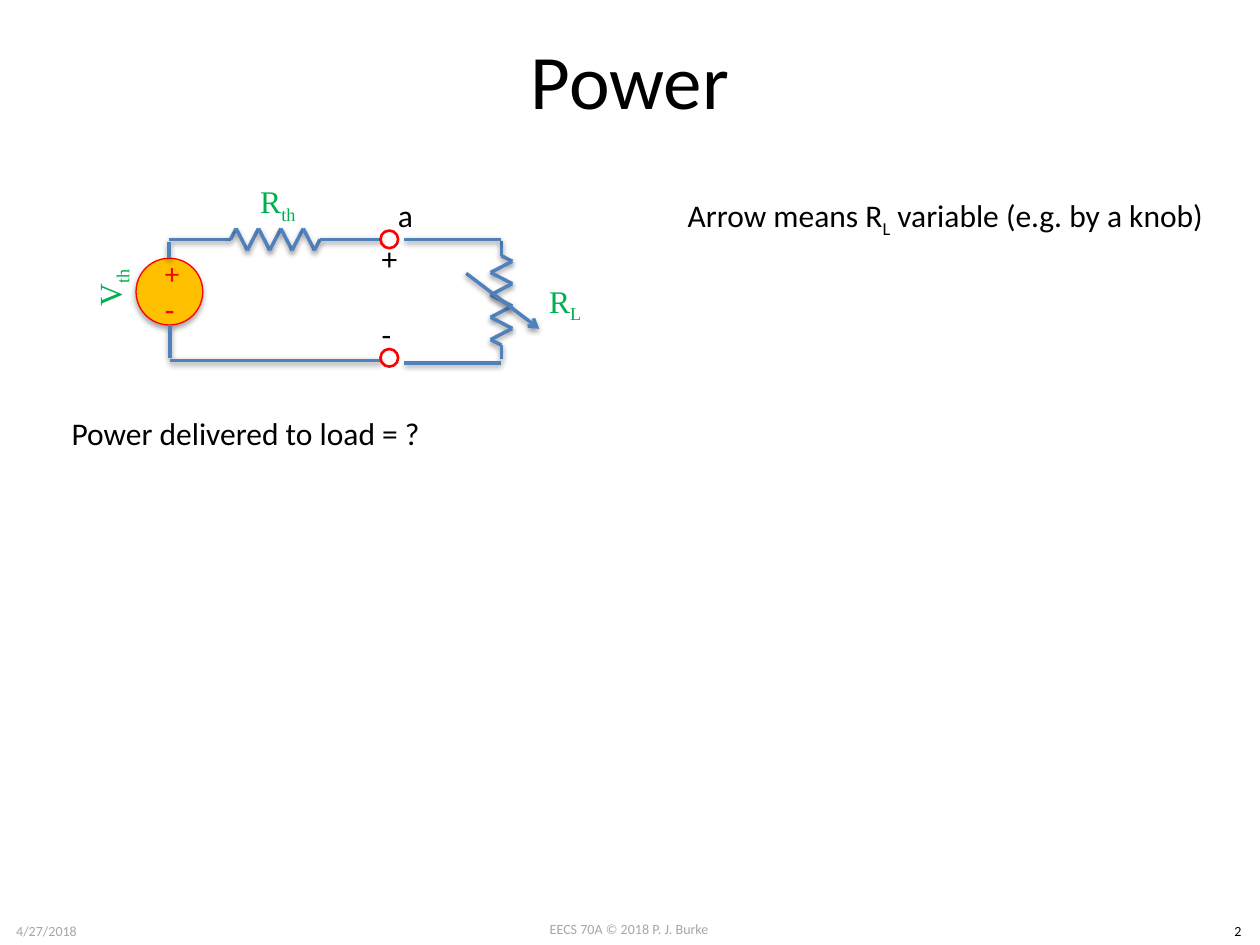
from dataclasses import dataclass
from itertools import pairwise

from lxml.etree import SubElement
from pptx import Presentation
from pptx.dml.color import RGBColor
from pptx.enum.shapes import MSO_CONNECTOR as Conn, MSO_SHAPE as Shape
from pptx.enum.text import MSO_ANCHOR as Anchor, MSO_AUTO_SIZE as Auto, PP_ALIGN as Align
from pptx.oxml.ns import qn
from pptx.util import Inches, Length, Pt

Point = tuple[float, float]


@dataclass(frozen=True)
class Theme:
    sans: str = "Calibri"
    serif: str = "Times New Roman"
    black: str = "000000"
    grey: str = "A6A6A6"
    green: str = "00B050"
    red: str = "FF0000"
    amber: str = "FFC000"
    blue: str = "4F81BD"
    title: float = 44
    body: float = 18
    plus: float = 16.6
    footer: float = 8
    wire: float = 2


T = Theme()
COLS, ROWS = 100, 75  # the slide as a grid of square cells


def cell(n: float) -> Length:
    return Inches(n * 10 / COLS)


@dataclass(frozen=True)
class Label:
    """Text in a grid box; every second string is a subscript."""
    strings: tuple[str, ...]
    box: tuple[float, float, float, float]
    size: float = T.body
    color: str = T.black
    font: str = T.sans
    centred: bool = False
    middle: bool = False
    rotation: float = 0


@dataclass(frozen=True)
class Resistor:
    start: Point
    lead_in: Point
    lead_out: Point
    vertical: bool = False
    length: float = 7.1
    teeth: int = 8
    swing: float = 0.86

    def zigzag(self) -> list[Point]:
        step = self.length / self.teeth
        along = [0, *((i + 0.5) * step for i in range(self.teeth)), self.length]
        first = self.swing if self.vertical else -self.swing
        across = [0, *(first * (-1) ** i for i in range(self.teeth)), 0]
        x, y = self.start
        if self.vertical:
            return [(x + b, y + a) for a, b in zip(along, across)]
        return [(x + a, y + b) for a, b in zip(along, across)]


def rgb(color: str) -> RGBColor:
    return RGBColor.from_string(color)


def add_label(shapes, label: Label) -> None:
    s = shapes.add_textbox(*map(cell, label.box))
    s.rotation = label.rotation
    tf = s.text_frame
    tf.word_wrap = label.centred
    tf.auto_size = Auto.NONE if label.middle else Auto.SHAPE_TO_FIT_TEXT
    tf.vertical_anchor = Anchor.MIDDLE if label.middle else Anchor.TOP
    p = tf.paragraphs[0]
    p.alignment = Align.CENTER if label.centred else Align.LEFT
    p.font.size, p.font.name = Pt(label.size), label.font
    p.font.color.rgb = rgb(label.color)
    for i, text in enumerate(label.strings):
        r = p.add_run()
        r.text = text
        if i % 2:
            r._r.get_or_add_rPr().set("baseline", "-25000")


def add_wire(shapes, start: Point, end: Point, arrow: bool = False) -> None:
    # The soft shadow of the theme is kept on wires
    c = shapes.add_connector(Conn.STRAIGHT, *map(cell, (*start, *end)))
    c.line.color.rgb, c.line.width = rgb(T.blue), Pt(T.wire)
    if arrow:
        SubElement(c.line._get_or_add_ln(), qn("a:tailEnd"), type="arrow")


def add_resistor(shapes, res: Resistor) -> None:
    points = res.zigzag()
    for a, b in pairwise([res.lead_in, *points, res.lead_out]):
        add_wire(shapes, a, b)


def add_circle(shapes, left: float, top: float, size: float, width: float,
               fill: str | None = None) -> None:
    s = shapes.add_shape(Shape.OVAL, *map(cell, (left, top, size, size)))
    s.line.color.rgb, s.line.width = rgb(T.red), Pt(width)
    if fill:
        s.fill.solid()
        s.fill.fore_color.rgb = rgb(fill)
    else:
        s.fill.background()
        s.shadow.inherit = False


def quantity(name: str, sub: str, left: float, top: float, rotation: float = 0) -> Label:
    return Label((name, sub), (left, top, 11.9, 7.3), color=T.green, font=T.serif,
                 centred=True, middle=True, rotation=rotation)


def polarity(sign: str, top: float, size: float) -> Label:
    return Label((sign,), (12.1, top, 2.6, 3.3), size, T.red, centred=True, middle=True)


def footer(text: str, left: float, top: float, width: float, color: str) -> Label:
    return Label((text,), (left, top, width, 2.4), T.footer, color, centred=True)


FOOTERS = (
    footer("EECS 70A © 2018 P. J. Burke", 38.3, 72.6, 23.3, T.grey),
    footer("4/27/2018", 0, 72.7, 7.4, T.grey),
    footer("2", 96.5, 72.7, 3.5, T.black),
)
SOURCE_WIRES = (
    ((13.5, 28.4), (13.5, 25.8)),
    ((13.4, 20.5), (13.4, 19.2)),
    ((13.5, 28.6), (30.3, 28.6)),
)
LOAD_WIRES = (
    ((39.8, 19), (32.1, 19)),
    ((39.8, 28.8), (32.1, 28.8)),
)
TERMINAL_LABELS = (
    Label(("a",), (30.6, 15.1, 3.2, 4)),
    Label(("+",), (29.3, 18.5, 3.3, 4)),
    Label(("-",), (29.3, 24.5, 2.8, 4)),
)
NOTES = (
    Label(("Arrow means R", "L", " variable (e.g. by a knob)"), (53.6, 15.1, 43.5, 4)),
    Label(("Power delivered to load = ?",), (4.7, 32.4, 30, 4)),
)


def main() -> None:
    prs = Presentation()
    prs.slide_width, prs.slide_height = cell(COLS), cell(ROWS)
    slide = prs.slides.add_slide(prs.slide_layouts[5])
    shapes = slide.shapes

    # Title
    title = shapes.title
    title.left, title.top, title.width, title.height = map(cell, (5, 0, 90, 12.5))
    title.text_frame.text = "Power"
    title.text_frame.vertical_anchor = Anchor.MIDDLE
    p = title.text_frame.paragraphs[0]
    p.alignment = Align.CENTER
    p.font.size, p.font.name, p.font.color.rgb = Pt(T.title), T.sans, rgb(T.black)

    for label in FOOTERS:
        add_label(shapes, label)

    # Thevenin resistor
    group = shapes.add_group_shape().shapes
    add_label(group, quantity("R", "th", 16.1, 12.5))
    add_resistor(group, Resistor((18.3, 19), (13.4, 19), (30.3, 19)))

    # Voltage source
    group = shapes.add_group_shape().shapes
    add_circle(group, 10.8, 20.5, 5.3, 0.75, T.amber)
    add_label(group, polarity("+", 20, T.plus))
    add_label(group, polarity("-", 22.9, T.body))
    for wire in SOURCE_WIRES:
        add_wire(shapes, *wire)
    add_label(shapes, quantity("V", "th", 2.9, 19.2, rotation=270))

    # Terminals
    for top in (18.3, 27.7):
        add_circle(shapes, 30.2, top, 1.4, 1.5)
    for label in TERMINAL_LABELS:
        add_label(shapes, label)

    # Variable load
    add_label(shapes, quantity("R", "L", 38.9, 20.4))
    group = shapes.add_group_shape().shapes
    add_resistor(group, Resistor((39.8, 20.3), (39.8, 19.1), (39.8, 28.5), vertical=True))
    for wire in LOAD_WIRES:
        add_wire(shapes, *wire)
    add_wire(shapes, (37, 21.7), (42.8, 26.1), arrow=True)

    for label in NOTES:
        add_label(shapes, label)
    prs.save("out.pptx")


if __name__ == "__main__":
    main()
